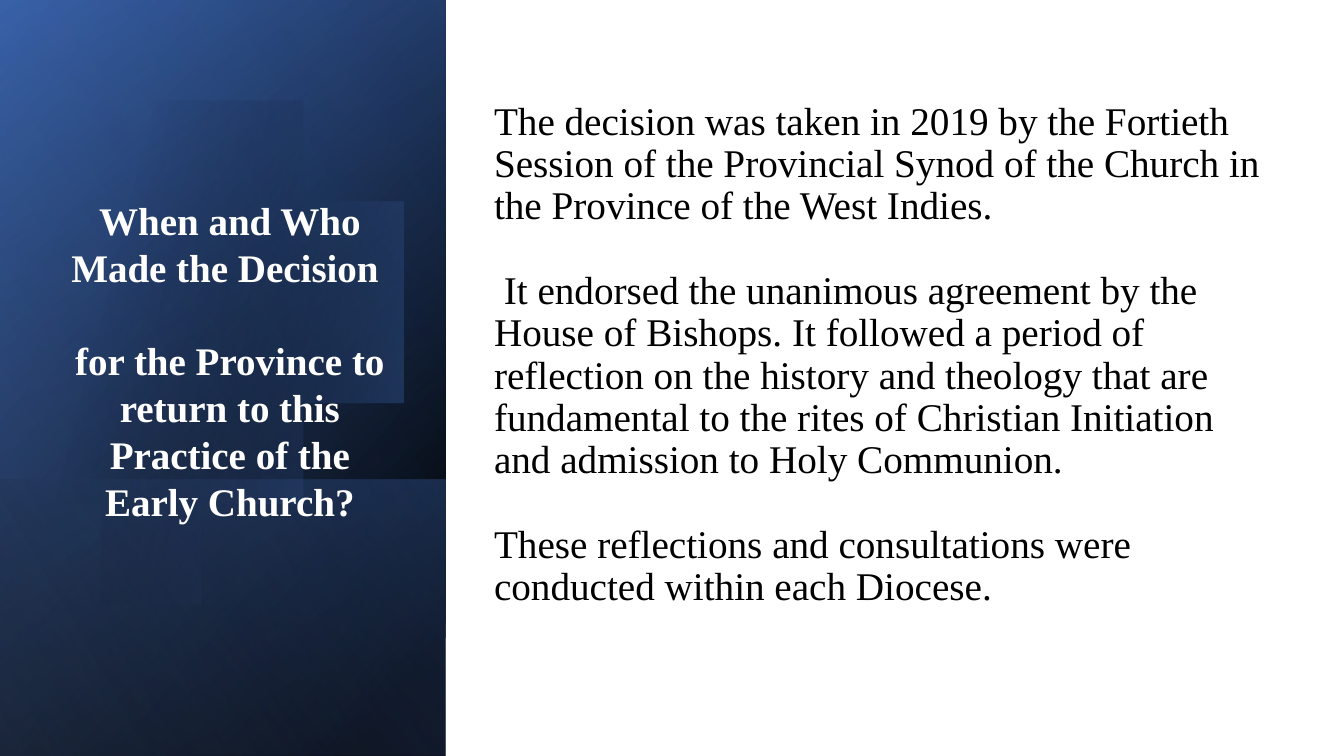
import math

from lxml import etree
from pptx import Presentation
from pptx.dml.color import RGBColor
from pptx.enum.shapes import MSO_SHAPE
from pptx.enum.text import MSO_ANCHOR, MSO_AUTO_SIZE, PP_ALIGN
from pptx.oxml.ns import qn
from pptx.util import Inches, Pt

RECTANGLE = MSO_SHAPE.RECTANGLE
BOTTOM, MIDDLE = MSO_ANCHOR.BOTTOM, MSO_ANCHOR.MIDDLE
CENTER, LEFT = PP_ALIGN.CENTER, PP_ALIGN.LEFT
NO_AUTOFIT = MSO_AUTO_SIZE.NONE

WIDTH, HEIGHT = 13.33, 7.5
PANEL_WIDTH = 4.42
FONT = "Times New Roman"
COLORS = {"white": "FFFFFF", "black": "000000", "navy": "2F5597",
          "blue": "4472C4", "sky": "8FAADC"}

TITLE = ["When and Who Made the Decision ",
         "for the Province to return to this Practice of the Early Church?"]
BODY = [
    "The decision was taken in 2019 by the Fortieth Session of the Provincial "
    "Synod of the Church in the Province of the West Indies.",
    " It endorsed the unanimous agreement by the House of Bishops. It followed "
    "a period of reflection on the history and theology that are fundamental "
    "to the rites of Christian Initiation and admission to Holy Communion.",
    "These reflections and consultations were conducted within each Diocese.",
]

# Panel layers: top, height, gradient angle, stops (position, colour, opacity)
BASE_LAYERS = [
    (0, HEIGHT, 50, [(8, "black", 100), (100, "navy", 100)]),
    (0, HEIGHT, 30, [(0, "black", 0), (99, "blue", 46)]),
    (4.76, 2.74, 130, [(2, "blue", 29), (100, "black", 30)]),
]
DISC_STOPS = [(29, "black", 0), (100, "blue", 43)]
TOP_LAYER = (0, HEIGHT, 120, [(0, "black", 0), (99, "sky", 11)])


def color(name):
    return RGBColor.from_string(COLORS[name])


def set_gradient(shape, angle, stops):
    """Fill a shape with a linear gradient whose stops carry opacity."""
    shape.shadow.inherit = False
    shape.line.fill.background()
    shape.fill.background()
    gradient = etree.Element(qn("a:gradFill"), rotWithShape="1")
    stop_list = etree.SubElement(gradient, qn("a:gsLst"))
    for position, name, opacity in stops:
        stop = etree.SubElement(stop_list, qn("a:gs"), pos=str(position * 1000))
        rgb = etree.SubElement(stop, qn("a:srgbClr"), val=COLORS[name])
        etree.SubElement(rgb, qn("a:alpha"), val=str(opacity * 1000))
    etree.SubElement(gradient, qn("a:lin"), ang=str(angle * 60000), scaled="0")
    properties = shape.element.spPr
    properties.replace(properties.find(qn("a:noFill")), gradient)


def add_layer(slide, top, height, angle, stops):
    """Add a mirrored quarter-turned rectangle that spans the panel."""
    left = (PANEL_WIDTH - height) / 2
    turned_top = top + (height - PANEL_WIDTH) / 2
    layer = slide.shapes.add_shape(RECTANGLE, Inches(left), Inches(turned_top),
                                   Inches(height), Inches(PANEL_WIDTH))
    layer.rotation = 90
    layer.element.spPr.xfrm.set("flipH", "1")
    set_gradient(layer, angle, stops)


def add_disc(slide, center_x, center_y, radius):
    """Add a disc cut off by the left edge of the slide."""
    limit = math.acos(-center_x / radius)
    steps = 120
    angles = [limit * (2 * step / steps - 1) for step in range(steps + 1)]
    points = [(center_x + radius * math.cos(angle),
               center_y + radius * math.sin(angle)) for angle in angles]
    builder = slide.shapes.build_freeform(*points[0], scale=Inches(1))
    builder.add_line_segments(points[1:], close=True)
    set_gradient(builder.convert_to_shape(), 14, DISC_STOPS)


def add_panel(slide):
    for layer in BASE_LAYERS:
        add_layer(slide, *layer)
    add_disc(slide, 1.44, 3.38, 2.28)
    add_layer(slide, *TOP_LAYER)


def fill_placeholder(slide, placeholder, box, texts, anchor, font, layout, gap):
    """Place a placeholder in front and write its paragraphs."""
    slide.shapes.element.append(placeholder.element)
    for name, value in zip(("left", "top", "width", "height"), box):
        setattr(placeholder, name, Inches(value))
    frame = placeholder.text_frame
    frame.text = "\n".join(texts)
    frame.word_wrap = True
    frame.auto_size = NO_AUTOFIT
    frame.vertical_anchor = anchor
    for index, paragraph in enumerate(frame.paragraphs):
        for name, value in layout.items():
            setattr(paragraph, name, value)
        paragraph.space_before = Pt(gap if index else 0)
        properties = paragraph._p.get_or_add_pPr()
        properties.set("marL", "0")
        properties.set("indent", "0")
        etree.SubElement(properties, qn("a:buNone"))
        for name, value in font.items():
            setattr(paragraph.runs[0].font, name, value)
        paragraph.runs[0].font.color.rgb = color(
            "white" if font["bold"] else "black")


def build_slide(presentation):
    slide = presentation.slides.add_slide(presentation.slide_layouts[1])
    # White backdrop
    backdrop = slide.shapes.add_shape(RECTANGLE, 0, 0, Inches(WIDTH), Inches(HEIGHT))
    backdrop.shadow.inherit = False
    backdrop.line.fill.background()
    backdrop.fill.solid()
    backdrop.fill.fore_color.rgb = color("white")
    # Blue panel with the question
    add_panel(slide)
    fill_placeholder(slide, slide.shapes.title, (0.53, 1.37, 3.5, 3.88), TITLE,
                     BOTTOM, {"name": FONT, "size": Pt(27.9), "bold": True},
                     {"alignment": CENTER, "line_spacing": 1.0}, 33.4)
    # Answer
    fill_placeholder(slide, slide.placeholders[1], (4.8, 0.71, 7.8, 5.63), BODY,
                     MIDDLE, {"name": FONT, "size": Pt(28), "bold": False},
                     {"alignment": LEFT, "line_spacing": 0.9}, 30.3)


def main():
    presentation = Presentation()
    presentation.slide_width = Inches(WIDTH)
    presentation.slide_height = Inches(HEIGHT)
    build_slide(presentation)
    presentation.save("out.pptx")


if __name__ == "__main__":
    main()
